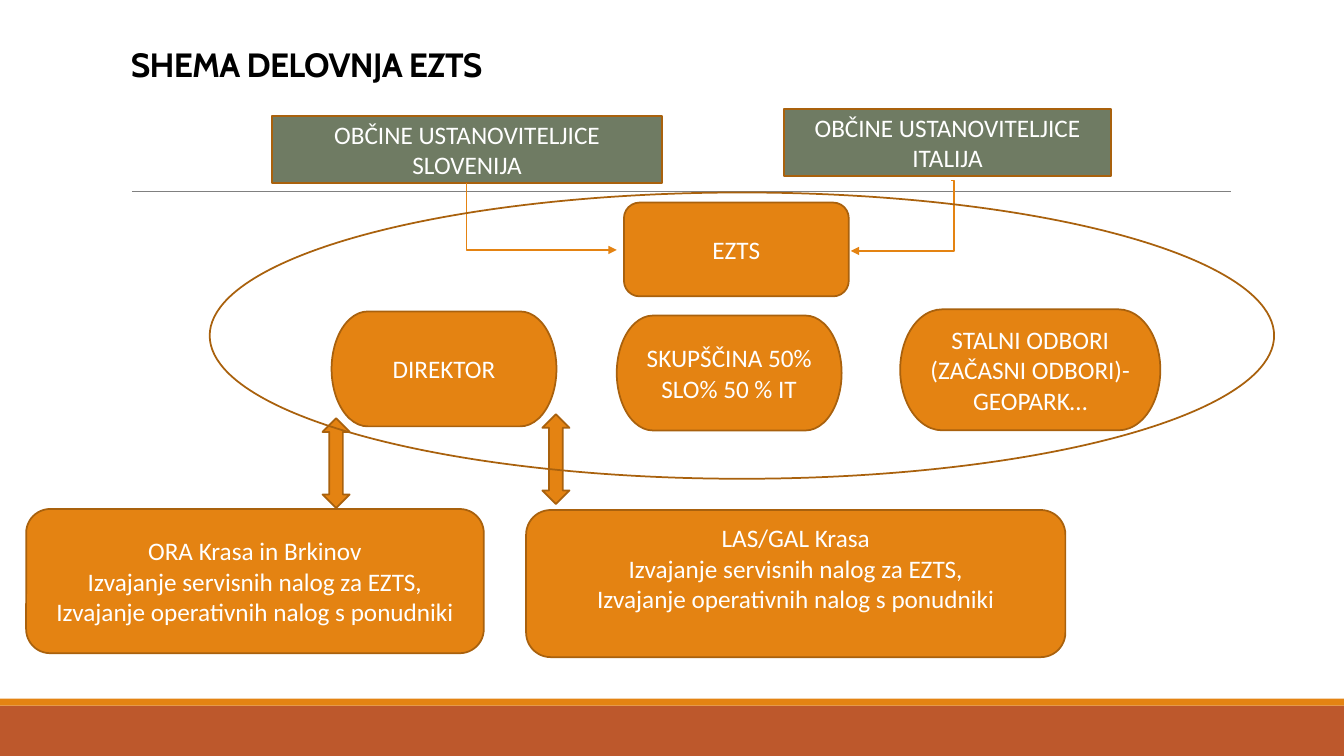
"""Build the EZTS organisation chart slide."""
from pptx import Presentation
from pptx.dml.color import RGBColor
from pptx.enum.shapes import MSO_CONNECTOR, MSO_SHAPE
from pptx.enum.text import MSO_ANCHOR, PP_ALIGN
from pptx.oxml.ns import qn
from pptx.util import Pt
from lxml.etree import SubElement

ORANGE, GREEN, RUST, BROWN = "E48312", "6F7B63", "BD582C", "A9610D"
WHITE, BLACK, GREY = "FFFFFF", "000000", "808080"
ROUNDED = MSO_SHAPE.FLOWCHART_ALTERNATE_PROCESS
PROCESS = MSO_SHAPE.FLOWCHART_PROCESS
TERMINATOR = MSO_SHAPE.FLOWCHART_TERMINATOR
LINE_HEIGHT = 22

TITLE = "SHEMA DELOVNJA EZTS"
TASKS = ["Izvajanje servisnih nalog za EZTS,", "Izvajanje operativnih nalog s ponudniki"]
BARS = [(RUST, (0, 504, 960, 36)), (ORANGE, (0, 499, 960, 5))]
BOXES = [
    (ROUNDED, ORANGE, (445.7, 144.7, 160.6, 67), ["EZTS"], 0),
    (PROCESS, GREEN, (194.4, 82.8, 278.6, 48.2), ["OBČINE USTANOVITELJICE SLOVENIJA"], 0),
    (PROCESS, GREEN, (560.2, 77.8, 233.3, 48.2), ["OBČINE USTANOVITELJICE ITALIJA"], 0),
    (TERMINATOR, ORANGE, (236.9, 222.5, 160.6, 82.1), ["DIREKTOR"], 0),
    (TERMINATOR, ORANGE, (440.6, 225.4, 160.6, 82.1), ["SKUPŠČINA 50% SLO% 50 % IT"], 0),
    (TERMINATOR, ORANGE, (643, 221, 185.8, 86.4),
     ["STALNI ODBORI (ZAČASNI ODBORI)-GEOPARK…"], 0),
    (ROUNDED, ORANGE, (18.7, 363.6, 326.9, 103), ["ORA Krasa in Brkinov"] + TASKS, 0),
    (ROUNDED, ORANGE, (375.8, 364.3, 385.2, 105.1), ["LAS/GAL Krasa"] + TASKS, LINE_HEIGHT),
]
ELBOWS = [((440.6, 178.6, 333.4, 131), 100000), ((607.7, 179.3, 679, 128.9), 103400)]
DOUBLE_ARROWS = [(230.4, 298.8, 19.4, 64.1), (387.4, 295.9, 19.4, 64.1)]
ELLIPSE = (149.8, 137.5, 760.3, 204.5)


def color(value):
    return RGBColor.from_string(value)


def add_shape(s, kind, box, fill=None, line=None):
    sp = s.shapes.add_shape(kind, *map(Pt, box))
    sp.shadow.inherit = False
    if fill:
        sp.fill.solid()
        sp.fill.fore_color.rgb = color(fill)
    else:
        sp.fill.background()
    if line:
        sp.line.color.rgb = color(line)
        sp.line.width = Pt(1.25)
    else:
        sp.line.fill.background()
    return sp


def add_line(s, kind, ends, line, width):
    cx = s.shapes.add_connector(kind, *map(Pt, ends))
    cx.line.color.rgb = color(line)
    cx.line.width = Pt(width)
    SubElement(cx._element.spPr, qn("a:effectLst"))
    return cx


def add_elbow(s, ends, bend):
    cx = add_line(s, MSO_CONNECTOR.ELBOW, ends, ORANGE, 1)
    geom = cx._element.spPr.find(qn("a:prstGeom"))
    guides = geom.find(qn("a:avLst"))
    if guides is None:
        guides = SubElement(geom, qn("a:avLst"))
    SubElement(guides, qn("a:gd"), name="adj1", fmla=f"val {bend}")
    SubElement(cx.line._get_or_add_ln(), qn("a:headEnd"), type="triangle")


def add_box(s, kind, fill, box, lines, space_below):
    tf = add_shape(s, kind, box, fill, BROWN).text_frame
    tf.word_wrap = True
    tf.vertical_anchor = MSO_ANCHOR.MIDDLE
    tf.margin_bottom = Pt(3.6 + space_below)
    tf.text = "\n".join(lines)
    for p in tf.paragraphs:
        p.alignment = PP_ALIGN.CENTER
        p.font.name, p.font.size = "Calibri", Pt(18)
        p.font.color.rgb = color(WHITE)


def add_title(s):
    tf = s.shapes.add_textbox(Pt(86.4), Pt(24.5), Pt(792), Pt(39.6)).text_frame
    tf.word_wrap = True
    tf.vertical_anchor = MSO_ANCHOR.BOTTOM
    p = tf.paragraphs[0]
    p.line_spacing = 0.85
    p.font.name, p.font.size, p.font.bold = "Cabin", Pt(24), True
    p.font.color.rgb = color(BLACK)
    r = p.add_run()
    r.text = TITLE
    r._r.get_or_add_rPr().set("spc", "-50")


def main():
    prs = Presentation()
    prs.slide_width, prs.slide_height = Pt(960), Pt(540)
    s = prs.slides.add_slide(prs.slide_layouts[6])
    for fill, box in BARS:
        add_shape(s, MSO_SHAPE.RECTANGLE, box, fill)
    add_line(s, MSO_CONNECTOR.STRAIGHT, (94.3, 136.8, 879.1, 136.8), GREY, 0.5)
    add_title(s)
    for box in BOXES:
        add_box(s, *box)
    for ends, bend in ELBOWS:
        add_elbow(s, ends, bend)
    for box in DOUBLE_ARROWS:
        add_shape(s, MSO_SHAPE.UP_DOWN_ARROW, box, ORANGE, BROWN)
    add_shape(s, MSO_SHAPE.OVAL, ELLIPSE, line=BROWN)
    prs.save("out.pptx")


if __name__ == "__main__":
    main()
